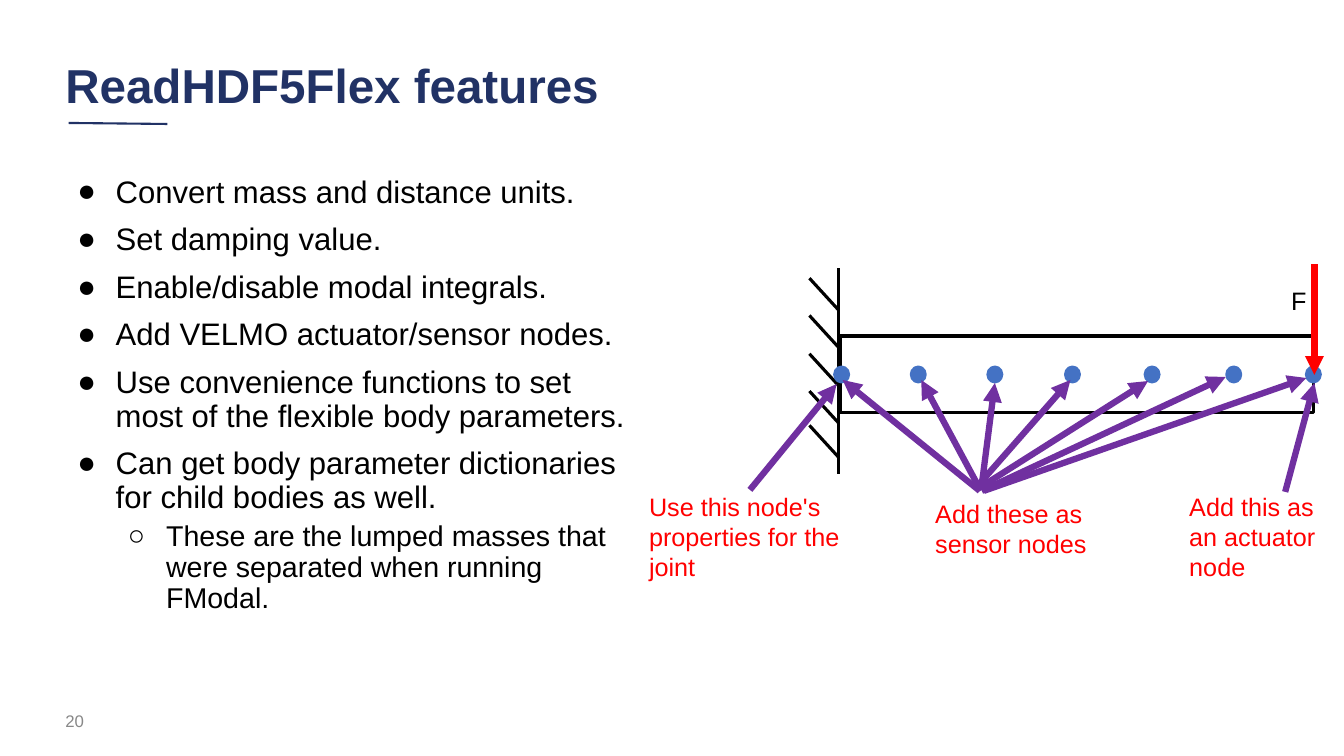
"""Build the slide on ReadHDF5Flex features with its annotated cantilever beam."""
from dataclasses import dataclass

from lxml.etree import SubElement
from pptx import Presentation
from pptx.dml.color import RGBColor
from pptx.enum.shapes import MSO_CONNECTOR as CONNECTOR, MSO_SHAPE as SHAPE
from pptx.enum.text import MSO_ANCHOR as ANCHOR
from pptx.oxml.ns import qn
from pptx.util import Inches, Pt

COLUMNS, ROWS = 80, 45
CELL = Inches(1) / 6


@dataclass(frozen=True)
class Theme:
    """Colours, font and sizes of the slide."""
    font: str = "Arial"
    navy: str = "213265"
    black: str = "000000"
    white: str = "FFFFFF"
    grey: str = "888888"
    blue: str = "4472C4"
    red: str = "FF0000"
    purple: str = "7030A0"
    title: float = 34
    body: float = 22.2
    detail: float = 20.4
    label: float = 18
    number: float = 12
    rule: float = 1.5
    outline: float = 2.25
    node: float = 2
    arrow: float = 4.5


THEME = Theme()

BULLETS = [
    (0, "Convert mass and distance units."),
    (0, "Set damping value."),
    (0, "Enable/disable modal integrals."),
    (0, "Add VELMO actuator/sensor nodes."),
    (0, "Use convenience functions to set most of the flexible body parameters."),
    (0, "Can get body parameter dictionaries for child bodies as well."),
    (1, "These are the lumped masses that were separated when running FModal."),
]
HATCH_TOPS = [16.56, 18.78, 21.06, 23.28, 25.32]
NODE_LEFTS = [49.68, 54.24, 58.8, 63.42, 68.16, 73.02, 77.76]
SENSOR_ARROWS = [
    ((58.32, 29.22), (50.16, 22.62)),
    ((58.14, 28.98), (63.72, 22.62)),
    ((58.2, 29.1), (68.34, 22.68)),
    ((58.44, 29.22), (72.96, 22.44)),
    ((58.44, 28.86), (59.22, 22.8)),
    ((58.26, 28.98), (54.84, 22.62)),
    ((58.56, 29.22), (77.76, 22.5)),
]
JOINT_ARROW = ((44.64, 29.16), (49.8, 22.86))
ACTUATOR_ARROW = ((76.5, 29.28), (78.24, 22.8))
FORCE_ARROW = ((78.24, 15.72), (78.24, 22.32))
LABELS = [
    ("F", (76.26, 16.68, 3.6, 2.34), THEME.black),
    ("Add these as sensor nodes", (55.08, 29.34, 10.68, 4.26), THEME.red),
    ("Add this as an actuator node", (70.2, 28.92, 9.6, 6.06), THEME.red),
    ("Use this node's properties for the joint", (38.04, 28.92, 15.66, 6.06), THEME.red),
]


def grid(*cells):
    """Turn counts of grid cells into lengths."""
    return [round(cell * CELL) for cell in cells]


def style_font(paragraph, size, color, bold=False):
    """Set the font of a paragraph."""
    font = paragraph.font
    font.name, font.size, font.bold = THEME.font, Pt(size), bold
    font.color.rgb = RGBColor.from_string(color)


def add_frame(slide, box, anchor=ANCHOR.TOP):
    """Add a wrapping text box and return its text frame."""
    frame = slide.shapes.add_textbox(*grid(*box)).text_frame
    frame.word_wrap = True
    frame.vertical_anchor = anchor
    return frame


def add_text(slide, text, box, size, color, bold=False, anchor=ANCHOR.TOP):
    """Add a text box of one paragraph."""
    paragraph = add_frame(slide, box, anchor).paragraphs[0]
    paragraph.text = text
    style_font(paragraph, size, color, bold)


def add_bullets(slide, bullets, box):
    """Add a bulleted list of two levels."""
    frame = add_frame(slide, box)
    for index, (level, text) in enumerate(bullets):
        paragraph = frame.add_paragraph() if index else frame.paragraphs[0]
        paragraph.text = text
        paragraph.level = level
        paragraph.line_spacing = 0.9
        paragraph.space_before = Pt((10, 5)[level] if index else 0)
        properties = paragraph._p.get_or_add_pPr()
        properties.set("marL", str(Inches((0.5, 1)[level])))
        properties.set("indent", str(Inches(-0.38)))
        SubElement(properties, qn("a:buFont"), typeface=THEME.font)
        SubElement(properties, qn("a:buChar"), char="●○"[level])
        style_font(paragraph, (THEME.body, THEME.detail)[level], THEME.black)


def add_line(slide, start, end, color, width, arrow=False):
    """Add a straight line, with an arrowhead at its end on request."""
    line = slide.shapes.add_connector(CONNECTOR.STRAIGHT, *grid(*start, *end))
    line.line.color.rgb = RGBColor.from_string(color)
    line.line.width = Pt(width)
    if arrow:
        SubElement(line.line._get_or_add_ln(), qn("a:tailEnd"), type="triangle")
    SubElement(line._element.spPr, qn("a:effectLst"))


def add_solid(slide, kind, box, fill, outline, width):
    """Add a filled and outlined shape."""
    shape = slide.shapes.add_shape(kind, *grid(*box))
    shape.shadow.inherit = False
    shape.fill.solid()
    shape.fill.fore_color.rgb = RGBColor.from_string(fill)
    shape.line.color.rgb = RGBColor.from_string(outline)
    shape.line.width = Pt(width)


def add_beam(slide):
    """Draw the beam, the wall that holds it and its nodes."""
    add_solid(slide, SHAPE.RECTANGLE, (50, 20, 28.2, 4.56),
              THEME.white, THEME.black, THEME.outline)
    add_line(slide, (49.92, 15.96), (49.92, 28.2), THEME.black, THEME.outline)
    for top in HATCH_TOPS:
        add_line(slide, (48.18, top), (49.92, top + 1.9), THEME.black, THEME.outline)
    for left in NODE_LEFTS:
        add_solid(slide, SHAPE.OVAL, (left, 21.84, 0.84, 0.9),
                  THEME.blue, THEME.blue, THEME.node)


def add_annotations(slide):
    """Draw the force, the pointers to the nodes and their labels."""
    add_line(slide, *FORCE_ARROW, THEME.red, THEME.arrow, arrow=True)
    for start, end in [*SENSOR_ARROWS, JOINT_ARROW, ACTUATOR_ARROW]:
        add_line(slide, start, end, THEME.purple, THEME.arrow, arrow=True)
    for text, box, color in LABELS:
        add_text(slide, text, box, THEME.label, color)


def main():
    """Build and save the presentation."""
    presentation = Presentation()
    presentation.slide_width, presentation.slide_height = grid(COLUMNS, ROWS)
    slide = presentation.slides.add_slide(presentation.slide_layouts[6])
    add_line(slide, (4.08, 7.32), (9.96, 7.38), THEME.navy, THEME.rule)
    add_text(slide, "20", (3.3, 41.7, 18, 2.4), THEME.number, THEME.grey,
             anchor=ANCHOR.MIDDLE)
    add_text(slide, "ReadHDF5Flex features", (3.3, 2.76, 66.72, 4.56), THEME.title,
             THEME.navy, bold=True, anchor=ANCHOR.MIDDLE)
    add_bullets(slide, BULLETS, (3.3, 10.2, 35.58, 31.68))
    add_beam(slide)
    add_annotations(slide)
    presentation.save("out.pptx")


if __name__ == "__main__":
    main()
